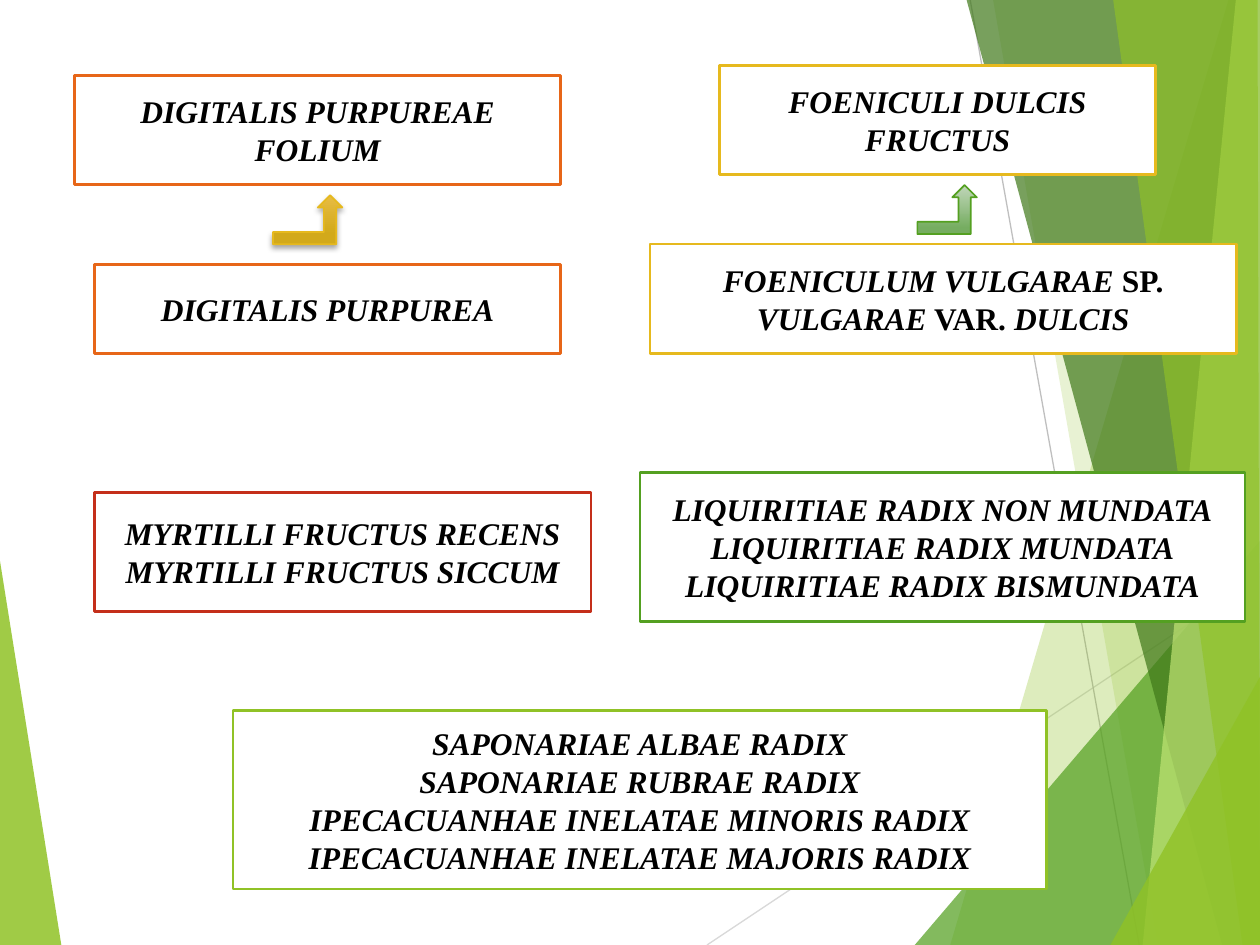
from lxml import etree
from pptx import Presentation
from pptx import util as u
from pptx.dml.color import RGBColor
from pptx.enum import shapes, text
from pptx.oxml.ns import qn

Pt = u.Pt
COLORS = {
    "white": "FFFFFF", "black": "000000", "lime": "90C226", "pale_lime": "C0E474",
    "green": "54A021", "dark_green": "3F7819", "orange": "E76618", "gold": "E6B91E",
    "red": "C42F1A", "silver": "D9D9D9", "gray": "BFBFBF",
    "sage": "C0D6B9", "moss": "76AD61", "light_gold": "E7BC43", "deep_gold": "D2A91B",
}


def rgb(name):
    return RGBColor.from_string(COLORS[name])


def add_facet(points, color, opacity):
    """Draw one translucent background polygon; opacity is in percent."""
    builder = slide.shapes.build_freeform(Pt(points[0][0]), Pt(points[0][1]), scale=1.0)
    builder.add_line_segments([(Pt(x), Pt(y)) for x, y in points[1:]], close=True)
    facet = builder.convert_to_shape()
    facet.shadow.inherit = False
    facet.fill.solid()
    facet.fill.fore_color.rgb = rgb(color)
    facet.line.fill.background()
    tint = facet.fill._xPr.find(qn("a:solidFill"))[0]
    etree.SubElement(tint, qn("a:alpha"), val=str(opacity * 1000))


prs = Presentation()
prs.slide_width, prs.slide_height = Pt(720), Pt(540)
slide = prs.slides.add_slide(prs.slide_layouts[6])

# Background: left wedge, two thin rays, then the facets on the right
add_facet([(-0.7, 316), (35.2, 540.7), (-0.7, 540)], "lime", 85)

rays = [((404, 540), (720.7, 329), "silver"), ((554.4, 0), (651, 540), "gray")]
for start, end, color in rays:
    ray = slide.shapes.add_connector(
        shapes.MSO_CONNECTOR.STRAIGHT, *(Pt(v) for v in start + end))
    ray.line.color.rgb = rgb(color)
    ray.line.width = Pt(0.75)
    etree.SubElement(ray._element.spPr, qn("a:effectLst"))

facets = [
    ([(702, 0), (543, 540), (721, 540), (721, 0)], "lime", 30),
    ([(567.4, -0.7), (661.7, 540), (720.7, 540), (720.7, -0.7)], "lime", 20),
    ([(522.7, 540), (720, 309), (720.7, 540)], "green", 72),
    ([(552.2, -0.7), (698.4, 540), (720.7, 540), (720.7, -0.7)], "dark_green", 70),
    ([(706.3, -0.7), (653, 540), (720.7, 540), (720, -0.7)], "pale_lime", 70),
    ([(636, -0.7), (710, 540), (720, 540), (718.6, -0.7)], "lime", 65),
    ([(634.5, 540), (720.7, 385.5), (720.7, 540)], "lime", 80),
]
for points, color, opacity in facets:
    add_facet(points, color, opacity)

# Boxes: each paragraph is a list of runs, alternately italic and upright
boxes = [
    ((42.5, 43, 278, 62.5), "orange", [["DIGITALIS PURPUREAE FOLIUM"]]),
    ((411, 37.3, 249.5, 62.5), "gold", [["FOENICULI DULCIS FRUCTUS"]]),
    ((371.5, 139.5, 335, 62.5), "gold",
     [["FOENICULUM VULGARAE ", "SP. ", "VULGARAE", " VAR. ", "DULCIS"]]),
    ((54, 151, 266.5, 51), "orange", [["DIGITALIS PURPUREA"]]),
    ((54, 281.3, 283.7, 68), "red",
     [["MYRTILLI FRUCTUS RECENS"], ["MYRTILLI FRUCTUS SICCUM"]]),
    ((365.8, 270, 345.6, 85), "green",
     [["LIQUIRITIAE RADIX NON MUNDATA"], ["LIQUIRITIAE RADIX MUNDATA"],
      ["LIQUIRITIAE RADIX BISMUNDATA"]]),
    ((133.2, 406, 465, 102), "lime",
     [["SAPONARIAE ALBAE RADIX"], ["SAPONARIAE RUBRAE RADIX"],
      ["IPECACUANHAE INELATAE MINORIS RADIX"],
      ["IPECACUANHAE INELATAE MAJORIS RADIX"]]),
]
for bounds, color, names in boxes:
    box = slide.shapes.add_shape(shapes.MSO_SHAPE.RECTANGLE, *(Pt(v) for v in bounds))
    box.shadow.inherit = False
    box.fill.solid()
    box.fill.fore_color.rgb = rgb("white")
    box.line.color.rgb = rgb(color)
    box.line.width = Pt(1.5)
    frame = box.text_frame
    frame.word_wrap = True
    frame.vertical_anchor = text.MSO_ANCHOR.MIDDLE
    for row, parts in enumerate(names):
        paragraph = frame.add_paragraph() if row else frame.paragraphs[0]
        paragraph.alignment = text.PP_ALIGN.CENTER
        for index, part in enumerate(parts):
            run = paragraph.add_run()
            run.text = part
            run.font.name = "Times New Roman"
            run.font.size = Pt(18)
            run.font.bold = True
            run.font.italic = index % 2 == 0
            run.font.color.rgb = rgb("black")

# Arrows from each plant up to its drug
arrows = [
    ((524.2, 105.8, 34, 28), "green", [("sage", 0), ("moss", 0.88)], False),
    ((156, 111.6, 39.6, 28), "gold", [("light_gold", 0), ("deep_gold", 0.78)], True),
]
for bounds, outline, stops, shaded in arrows:
    arrow = slide.shapes.add_shape(
        shapes.MSO_SHAPE.BENT_UP_ARROW, *(Pt(v) for v in bounds))
    arrow.fill.gradient()
    arrow.fill.gradient_angle = 270
    for stop, (color, position) in zip(arrow.fill.gradient_stops, stops):
        stop.color.rgb = rgb(color)
        stop.position = position
    arrow.line.color.rgb = rgb(outline)
    arrow.line.width = Pt(1)
    arrow.shadow.inherit = False
    if shaded:
        effects = arrow._element.spPr.find(qn("a:effectLst"))
        shade = etree.SubElement(
            effects, qn("a:outerShdw"), blurRad=str(Pt(3)), dist=str(Pt(2)),
            dir="5400000", rotWithShape="0")
        tint = etree.SubElement(shade, qn("a:srgbClr"), val=COLORS["black"])
        etree.SubElement(tint, qn("a:alpha"), val="35000")

prs.save("out.pptx")
